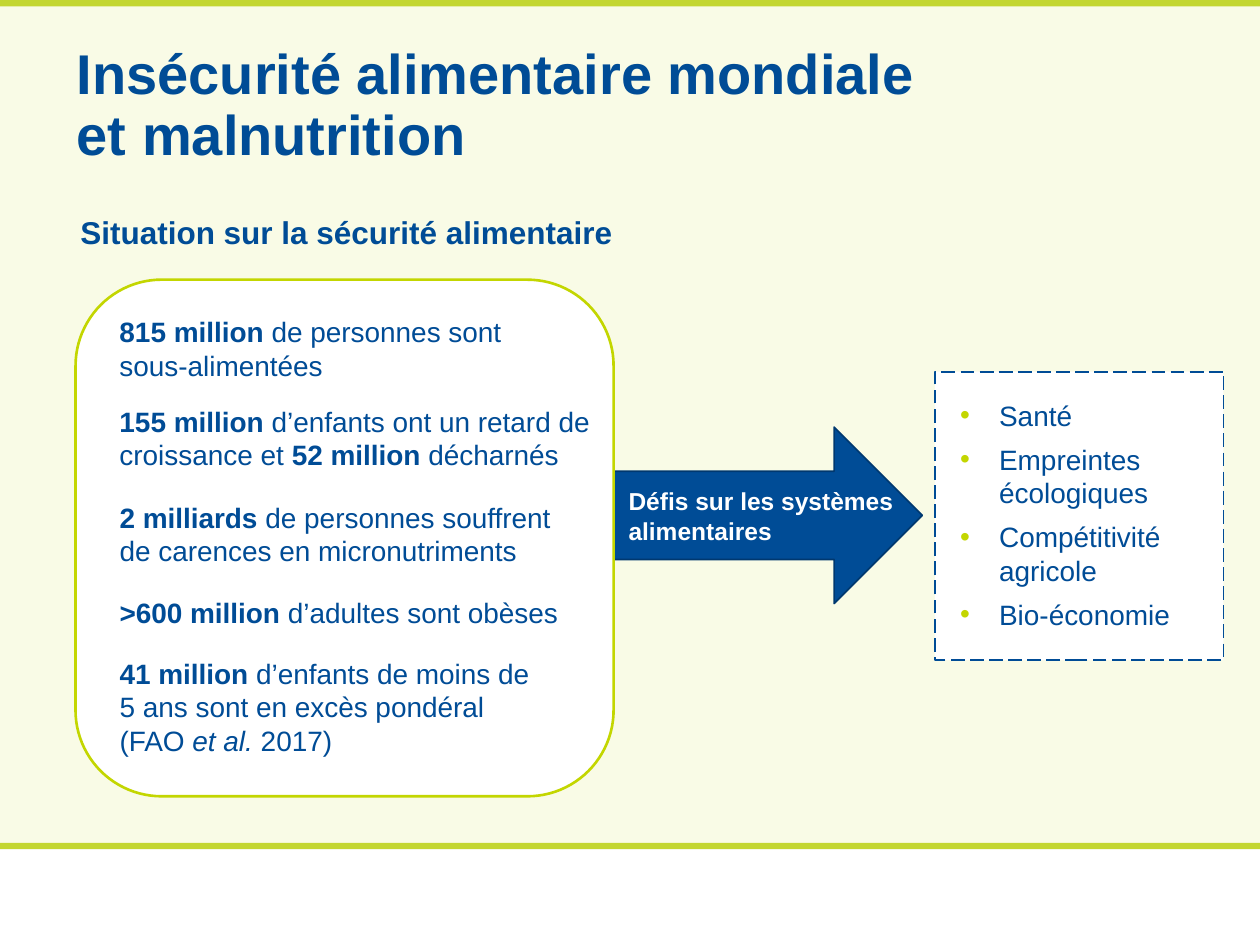
from dataclasses import dataclass
from typing import Any, NamedTuple, Optional

from lxml.etree import SubElement
from pptx import Presentation
from pptx.dml.color import RGBColor
from pptx.enum.dml import MSO_LINE_DASH_STYLE as Dash
from pptx.enum.shapes import MSO_SHAPE as Preset
from pptx.enum.text import MSO_ANCHOR as Anchor, MSO_AUTO_SIZE as AutoSize, PP_ALIGN as Align
from pptx.oxml.ns import qn
from pptx.util import Inches, Pt


@dataclass(frozen=True)
class Theme:
    """Colours, typeface and type sizes of the slide."""
    background: str = "F9FBE6"
    bar: str = "C3D631"
    lime: str = "C3D600"
    blue: str = "004C96"
    dark_blue: str = "00386F"
    white: str = "FFFFFF"
    font: str = "Arial"
    title: int = 32
    heading: int = 18
    text: int = 16
    label: int = 14


class Box(NamedTuple):
    """Left, top, width and height in inches."""
    left: float
    top: float
    width: float
    height: float


class Run(NamedTuple):
    """A piece of text with its emphasis."""
    text: str
    bold: bool = False
    italic: bool = False


class Panel(NamedTuple):
    """A filled preset shape, outlined when a line colour is given."""
    preset: Any
    box: Box
    fill: str
    line: Optional[str] = None
    weight: float = 1
    dash: Any = None


class TextBlock(NamedTuple):
    """Paragraphs of lines of runs in one box."""
    box: Box
    paragraphs: list
    size: int
    color: str
    wrap: bool = True


THEME = Theme()
FACT_LEFT = 0.85

PANELS = [
    Panel(Preset.RECTANGLE, Box(0, 6.74, 10, 0.76), THEME.white),
    Panel(Preset.RECTANGLE, Box(0, 6.69, 10, 0.05), THEME.bar),
    Panel(Preset.RECTANGLE, Box(0, 0, 10, 0.05), THEME.bar),
    Panel(Preset.RIGHT_ARROW, Box(4.77, 3.39, 2.55, 1.4), THEME.blue, THEME.dark_blue),
    Panel(Preset.ROUNDED_RECTANGLE, Box(0.6, 2.22, 4.27, 4.1), THEME.white, THEME.lime, 1.5),
    Panel(Preset.RECTANGLE, Box(7.42, 2.95, 2.29, 2.29), THEME.white, THEME.blue, 1, Dash.LONG_DASH),
]

FACTS = [
    (2.45, 3.44, 0.64, [[Run("815 million ", True), Run("de personnes sont sous-alimentées")]]),
    (3.16, 3.96, 0.64, [[Run("155 million ", True), Run("d’enfants ont un retard de croissance et "),
                         Run("52 million ", True), Run("décharnés")]]),
    (3.92, 3.72, 0.64, [[Run("2 milliards ", True),
                         Run("de personnes souffrent de carences en micronutriments")]]),
    (4.68, 3.72, 0.37, [[Run(">600 million ", True), Run("d’adultes sont obèses")]]),
    (5.16, 3.85, 0.91, [[Run("41 million ", True), Run("d’enfants de moins de ")],
                        [Run("5 ans sont en excès pondéral ")],
                        [Run("(FAO "), Run("et al. ", italic=True), Run("2017)")]]),
]

TEXT_BLOCKS = [
    TextBlock(Box(0.54, 1.64, 4.47, 0.4), [[[Run("Situation sur la sécurité alimentaire", True)]]],
              THEME.heading, THEME.blue, False),
    *(TextBlock(Box(FACT_LEFT, top, width, height), [lines], THEME.text, THEME.blue)
      for top, width, height, lines in FACTS),
    TextBlock(Box(4.89, 3.81, 2.47, 0.57),
              [[[Run("Défis sur les systèmes", True)]], [[Run("alimentaires", True)]]],
              THEME.label, THEME.white),
]

TITLE = "Insécurité alimentaire mondiale et malnutrition"
CHALLENGES = ["Santé", "Empreintes écologiques", "Compétitivité agricole", "Bio-économie"]


def apply_format(target: Any, values: dict) -> None:
    """Set every attribute named in values."""
    for name, value in values.items():
        setattr(target, name, value)


def style_font(font: Any, size: int, color: str, bold: bool = False, italic: bool = False) -> None:
    """Give a font the slide's typeface and the wanted look."""
    apply_format(font, {"name": THEME.font, "size": Pt(size), "bold": bold, "italic": italic})
    font.color.rgb = RGBColor.from_string(color)


def place(shape: Any, box: Box) -> None:
    """Move and size a shape."""
    apply_format(shape, {name: Inches(value) for name, value in box._asdict().items()})


def draw_panel(slide: Any, panel: Panel) -> None:
    """Add one panel."""
    shape = slide.shapes.add_shape(panel.preset, *map(Inches, panel.box))
    shape.shadow.inherit = False
    shape.fill.solid()
    shape.fill.fore_color.rgb = RGBColor.from_string(panel.fill)
    if panel.line is None:
        shape.line.fill.background()
        return
    shape.line.color.rgb = RGBColor.from_string(panel.line)
    apply_format(shape.line, {"width": Pt(panel.weight), "dash_style": panel.dash})


def draw_text(slide: Any, block: TextBlock) -> None:
    """Add one text box."""
    frame = slide.shapes.add_textbox(*map(Inches, block.box)).text_frame
    apply_format(frame, {"word_wrap": block.wrap, "auto_size": AutoSize.SHAPE_TO_FIT_TEXT})
    for number, lines in enumerate(block.paragraphs):
        paragraph = frame.add_paragraph() if number else frame.paragraphs[0]
        for line_number, line in enumerate(lines):
            if line_number:
                paragraph.add_line_break()
            for piece in line:
                run = paragraph.add_run()
                run.text = piece.text
                style_font(run.font, block.size, block.color, piece.bold, piece.italic)


def add_bullet(paragraph: Any) -> None:
    """Give a paragraph a lime bullet with a hanging indent."""
    properties = paragraph._p.get_or_add_pPr()
    indent = Inches(0.31)
    properties.set("marL", str(indent))
    properties.set("indent", str(-indent))
    SubElement(SubElement(properties, qn("a:buClr")), qn("a:srgbClr"), val=THEME.lime)
    SubElement(properties, qn("a:buFont"), typeface=THEME.font)
    SubElement(properties, qn("a:buChar"), char="•")


def fill_title(title: Any) -> None:
    """Write the slide title."""
    place(title, Box(0.51, 0.25, 6.91, 1.2))
    frame = title.text_frame
    frame.text = TITLE
    apply_format(frame, {"vertical_anchor": Anchor.MIDDLE, "word_wrap": True, "auto_size": AutoSize.NONE})
    paragraph = frame.paragraphs[0]
    apply_format(paragraph, {"alignment": Align.LEFT, "line_spacing": 0.9})
    style_font(paragraph.runs[0].font, THEME.title, THEME.blue, True)


def fill_challenges(body: Any) -> None:
    """Write the bulleted list of challenges."""
    place(body, Box(7.52, 3.11, 2.19, 1.97))
    frame = body.text_frame
    frame.text = "\n".join(CHALLENGES)
    apply_format(frame, {"vertical_anchor": Anchor.TOP, "word_wrap": True, "auto_size": AutoSize.NONE})
    for number, paragraph in enumerate(frame.paragraphs):
        add_bullet(paragraph)
        paragraph.space_before = Pt(6 if number else 0)
        style_font(paragraph.runs[0].font, THEME.text, THEME.blue)


def main() -> None:
    """Build and save the slide."""
    presentation = Presentation()
    apply_format(presentation, {"slide_width": Inches(10), "slide_height": Inches(7.5)})
    slide = presentation.slides.add_slide(presentation.slide_layouts[1])
    slide.background.fill.solid()
    slide.background.fill.fore_color.rgb = RGBColor.from_string(THEME.background)
    title, body = slide.placeholders
    for panel in PANELS:
        draw_panel(slide, panel)
    for placeholder in (title, body):
        slide.shapes._spTree.append(placeholder._element)
    fill_title(title)
    fill_challenges(body)
    for block in TEXT_BLOCKS:
        draw_text(slide, block)
    presentation.save("out.pptx")


if __name__ == "__main__":
    main()
